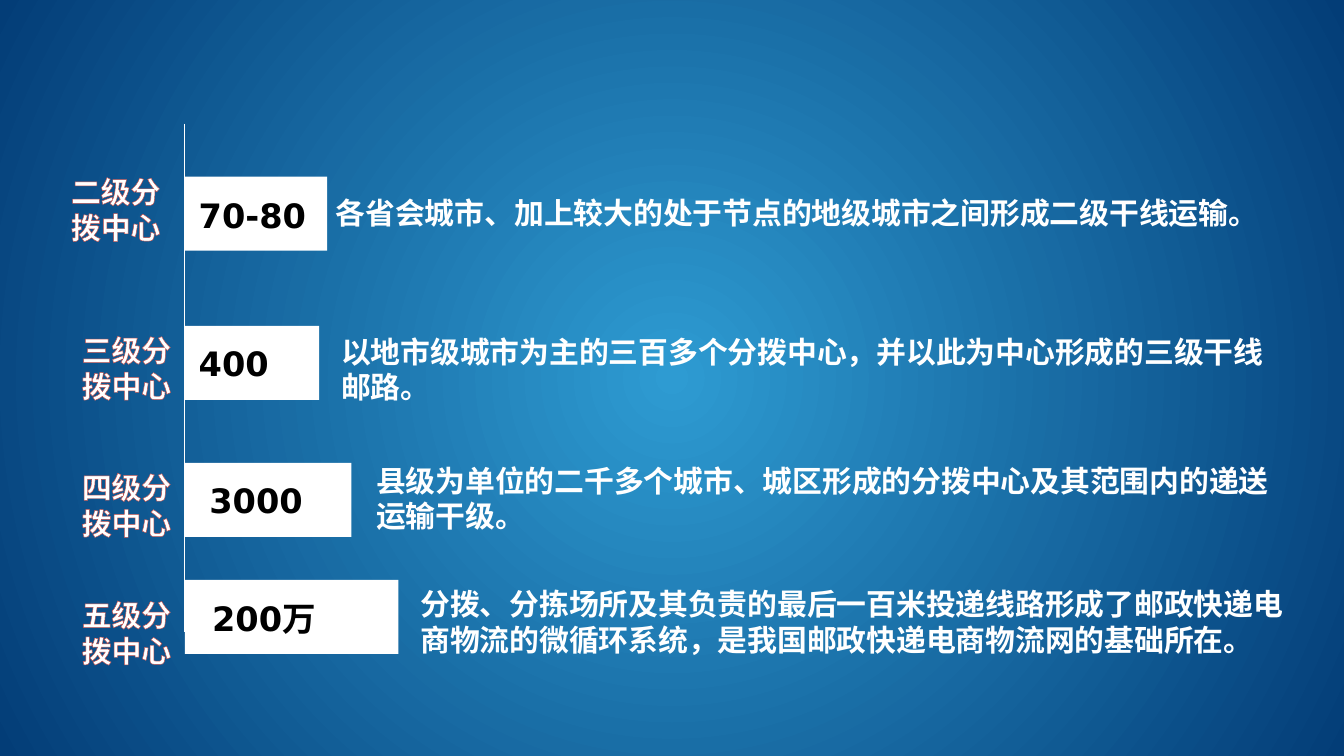
from pptx import Presentation
from pptx.dml.color import RGBColor
from pptx.enum.shapes import MSO_CONNECTOR, MSO_SHAPE
from pptx.enum.text import MSO_AUTO_SIZE
from pptx.oxml import parse_xml
from pptx.oxml.ns import nsdecls, qn
from pptx.util import Inches, Pt

WHITE = RGBColor(0xFF, 0xFF, 0xFF)
BLACK = RGBColor(0, 0, 0)
SKY = RGBColor(0x2E, 0x9B, 0xD2)
NAVY = RGBColor(0x03, 0x3D, 0x77)
RED = RGBColor(0xC0, 0x50, 0x4D)

WIDE = 10
HIGH = WIDE * 9 / 16
AXIS = WIDE * 11 / 80  # left edge shared by all bars
BAR = 0.55

# bar: middle, length; label, count and note: text and box
ROWS = [
    (1.59, 1.06,
     ("二级分拨中心", (0.43, 1.24, 0.89, 0.65)),
     ("70-80", (1.38, 1.4, 1.05, 0.4)),
     (["各省会城市、加上较大的处于节点的地级城市之间形成二级干线运输。"],
      (2.4, 1.4, 6.94, 0.39))),
    (2.7, 1,
     ("三级分拨中心", (0.51, 2.42, 0.89, 0.65)),
     ("400", (1.38, 2.5, 1.02, 0.4)),
     (["以地市级城市为主的三百多个分拨中心，并以此为中心形成的三级干线", "邮路。"],
      (2.44, 2.43, 7.47, 0.65))),
    (3.72, 1.24,
     ("四级分拨中心", (0.51, 3.44, 0.89, 0.65)),
     ("3000", (1.46, 3.52, 1.14, 0.4)),
     (["县级为单位的二千多个城市、城区形成的分拨中心及其范围内的递送运输干级。"],
      (2.7, 3.39, 6.86, 0.65))),
    (4.59, 1.59,
     ("五级分拨中心", (0.51, 4.39, 0.89, 0.65)),
     ("200万", (1.48, 4.4, 1.39, 0.42)),
     (["分拨、分拣场所及其负责的最后一百米投递线路形成了邮政快递电商物流的"
       "微循环系统，是我国邮政快递电商物流网的基础所在。"],
      (3.03, 4.31, 6.77, 0.65))),
]


def paint_back(slide):
    """Fill the background with a glow from the centre."""
    fill = slide.background.fill
    fill.gradient()
    for stop, color in zip(fill.gradient_stops, (SKY, NAVY)):
        stop.color.rgb = color
    lin = slide.element.find(".//" + qn("a:lin"))
    glow = parse_xml(
        f'<a:path {nsdecls("a")} path="circle">'
        '<a:fillToRect l="50000" t="50000" r="50000" b="50000"/></a:path>')
    lin.getparent().replace(lin, glow)


def add_bar(slide, mid, length):
    box = (AXIS, mid - BAR / 2, length, BAR)
    bar = slide.shapes.add_shape(MSO_SHAPE.RECTANGLE, *map(Inches, box))
    bar.shadow.inherit = False
    bar.fill.solid()
    bar.fill.fore_color.rgb = WHITE
    bar.line.fill.background()


def add_axis(slide, top, end):
    ends = (AXIS, top, AXIS, end)
    line = slide.shapes.add_connector(MSO_CONNECTOR.STRAIGHT, *map(Inches, ends))
    line.line.color.rgb = WHITE
    line.line.width = Pt(0.75)
    line.element.spPr.append(parse_xml(f'<a:effectLst {nsdecls("a")}/>'))


def edge(run, color):
    """Outline the letters of a run."""
    line = parse_xml(
        f'<a:ln {nsdecls("a")} w="{Pt(0.52)}"><a:solidFill>'
        f'<a:srgbClr val="{color}"/></a:solidFill></a:ln>')
    run._r.get_or_add_rPr().insert(0, line)


def add_text(slide, lines, box, size=16, color=WHITE, face="DejaVu Sans", rim=None):
    frame = slide.shapes.add_textbox(*map(Inches, box)).text_frame
    frame.word_wrap = True
    frame.auto_size = MSO_AUTO_SIZE.SHAPE_TO_FIT_TEXT
    for num, line in enumerate(lines):
        para = frame.add_paragraph() if num else frame.paragraphs[0]
        run = para.add_run()
        run.text = line
        run.font.name = face
        run.font.size = Pt(size)
        run.font.bold = True
        run.font.color.rgb = color
        if rim:
            edge(run, rim)


def main():
    deck = Presentation()
    deck.slide_width, deck.slide_height = Inches(WIDE), Inches(HIGH)
    slide = deck.slides.add_slide(deck.slide_layouts[6])
    paint_back(slide)
    for mid, length, *_ in ROWS:
        add_bar(slide, mid, length)
    add_axis(slide, 0.92, 4.7)
    for _, _, (label, spot), (count, place), (note, area) in ROWS:
        add_text(slide, [label], spot, face="Arial Narrow", rim=RED)
        add_text(slide, [count], place, size=18, color=BLACK)
        add_text(slide, note, area)
    deck.save("out.pptx")


if __name__ == "__main__":
    main()
